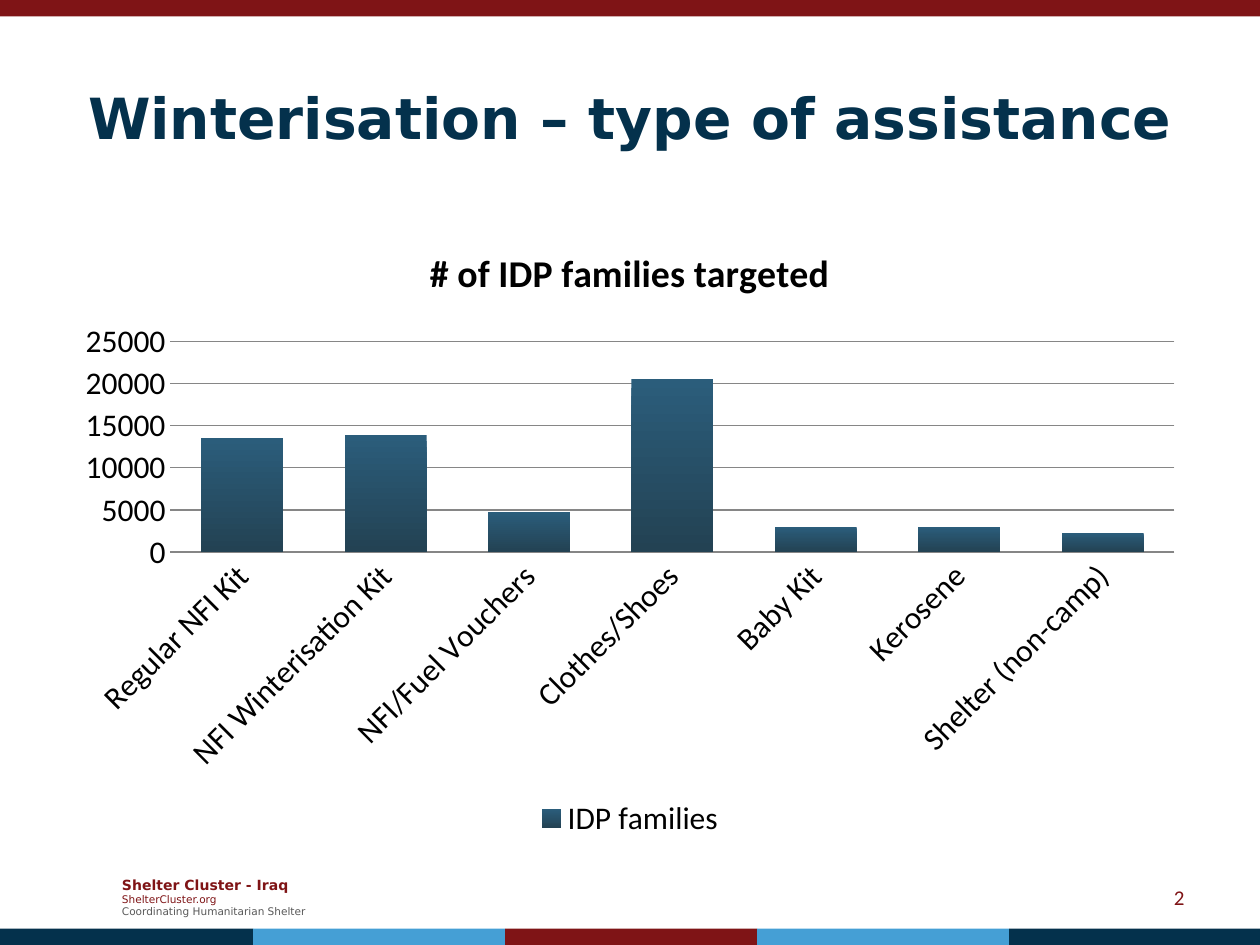
from pptx import Presentation
from pptx.chart.data import CategoryChartData
from pptx.dml.color import RGBColor
from pptx.enum.chart import XL_CHART_TYPE as ChartType, XL_LEGEND_POSITION as LegendPos, XL_TICK_MARK as Tick
from pptx.enum.shapes import MSO_SHAPE as Shape
from pptx.enum.text import MSO_ANCHOR as Anchor, PP_ALIGN as Align
from pptx.util import Inches, Pt

NAVY = RGBColor(0x04, 0x31, 0x4C)
SKY = RGBColor(0x45, 0x9F, 0xD5)
MAROON = RGBColor(0x7F, 0x14, 0x16)
GREY = RGBColor(0x59, 0x59, 0x59)
GRID = RGBColor(0x86, 0x86, 0x86)
BLACK = RGBColor(0, 0, 0)
BAR_TOP = RGBColor(0x2B, 0x5D, 0x7B)
BAR_BOTTOM = RGBColor(0x23, 0x42, 0x53)

HEADING_FONT = "DejaVu Sans"
BODY_FONT = "Calibri"
BAND_HEIGHT = 0.13

FAMILIES = {
    "Regular NFI Kit": 13500,
    "NFI Winterisation Kit": 13900,
    "NFI/Fuel Vouchers": 4800,
    "Clothes/Shoes": 20500,
    "Baby Kit": 3000,
    "Kerosene": 3000,
    "Shelter (non-camp)": 2300,
}


def style(font, size, color, name, bold=False):
    font.size = Pt(size)
    font.color.rgb = color
    font.name = name
    font.bold = bold


def add_band(slide, left, top, width, color):
    band = slide.shapes.add_shape(
        Shape.RECTANGLE, Inches(left), Inches(top), Inches(width), Inches(BAND_HEIGHT))
    band.shadow.inherit = False
    band.fill.solid()
    band.fill.fore_color.rgb = color
    band.line.fill.background()


def add_bands(slide, width, height):
    add_band(slide, 0, 0, width, MAROON)
    colors = [NAVY, SKY, MAROON, SKY, NAVY]
    step = width / len(colors)
    for i, color in enumerate(colors):
        add_band(slide, i * step + 0.01, height - BAND_HEIGHT, step, color) if i else \
            add_band(slide, 0, height - BAND_HEIGHT, step + 0.01, color)


def add_lines(slide, box, lines, align=Align.LEFT):
    """Place one paragraph per (text, size, colour, font, bold) line."""
    frame = slide.shapes.add_textbox(*map(Inches, box)).text_frame
    frame.word_wrap = True
    frame.vertical_anchor = Anchor.MIDDLE
    frame.text = "\n".join(line[0] for line in lines)
    for paragraph, (_, *look) in zip(frame.paragraphs, lines):
        paragraph.alignment = align
        style(paragraph.runs[0].font, *look)


def add_families_chart(slide, box):
    data = CategoryChartData()
    data.categories = list(FAMILIES)
    data.add_series("IDP families", list(FAMILIES.values()))
    chart = slide.shapes.add_chart(
        ChartType.COLUMN_CLUSTERED, *map(Inches, box), data).chart
    style(chart.font, 18, BLACK, BODY_FONT)

    # Title and legend
    chart.has_title = True
    title = chart.chart_title.text_frame
    title.text = "# of IDP families targeted"
    style(title.paragraphs[0].runs[0].font, 21.6, BLACK, BODY_FONT, True)
    chart.has_legend = True
    chart.legend.position = LegendPos.BOTTOM
    chart.legend.include_in_layout = False

    # Axes
    for axis in (chart.category_axis, chart.value_axis):
        axis.major_tick_mark = axis.minor_tick_mark = Tick.NONE
    chart.category_axis.format.line.color.rgb = GRID
    values = chart.value_axis
    values.minimum_scale, values.maximum_scale, values.major_unit = 0, 25000, 5000
    values.format.line.fill.background()
    values.major_gridlines.format.line.color.rgb = GRID

    # Columns
    plot = chart.plots[0]
    plot.gap_width = 75
    plot.overlap = -25
    plot.vary_by_categories = False
    fill = plot.series[0].format.fill
    fill.gradient()
    fill.gradient_angle = 270
    for stop, color in zip(fill.gradient_stops, (BAR_TOP, BAR_BOTTOM)):
        stop.color.rgb = color


def main():
    prs = Presentation()
    prs.slide_width, prs.slide_height = Inches(10), Inches(7.5)
    slide = prs.slides.add_slide(prs.slide_layouts[6])

    # Footer and colour bands
    add_lines(slide, (0.87, 6.9, 1.73, 0.44), [
        ("Shelter Cluster - Iraq", 8, MAROON, HEADING_FONT, True),
        ("ShelterCluster.org", 6, MAROON, HEADING_FONT),
        ("Coordinating Humanitarian Shelter", 6, GREY, HEADING_FONT),
    ])
    add_bands(slide, 10, 7.5)

    # Title, page number and chart
    add_lines(slide, (0.5, 0.3, 9, 1.25), [
        ("Winterisation – type of assistance", 32.4, NAVY, HEADING_FONT, True)], Align.CENTER)
    add_lines(slide, (7.17, 6.92, 2.33, 0.4), [("2", 12, MAROON, BODY_FONT)], Align.RIGHT)
    add_families_chart(slide, (0.5, 1.75, 9, 4.95))

    prs.save("out.pptx")


if __name__ == "__main__":
    main()
